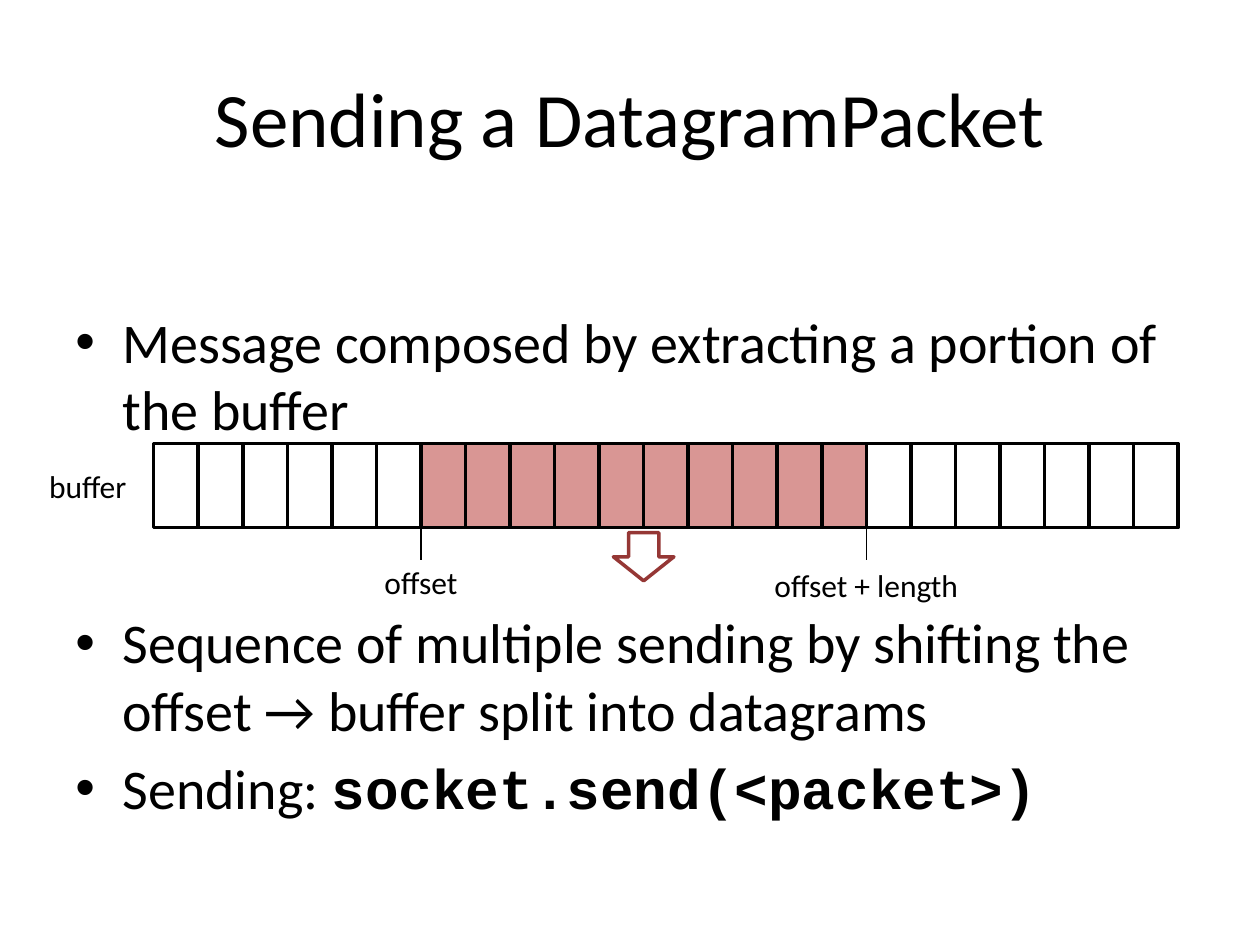
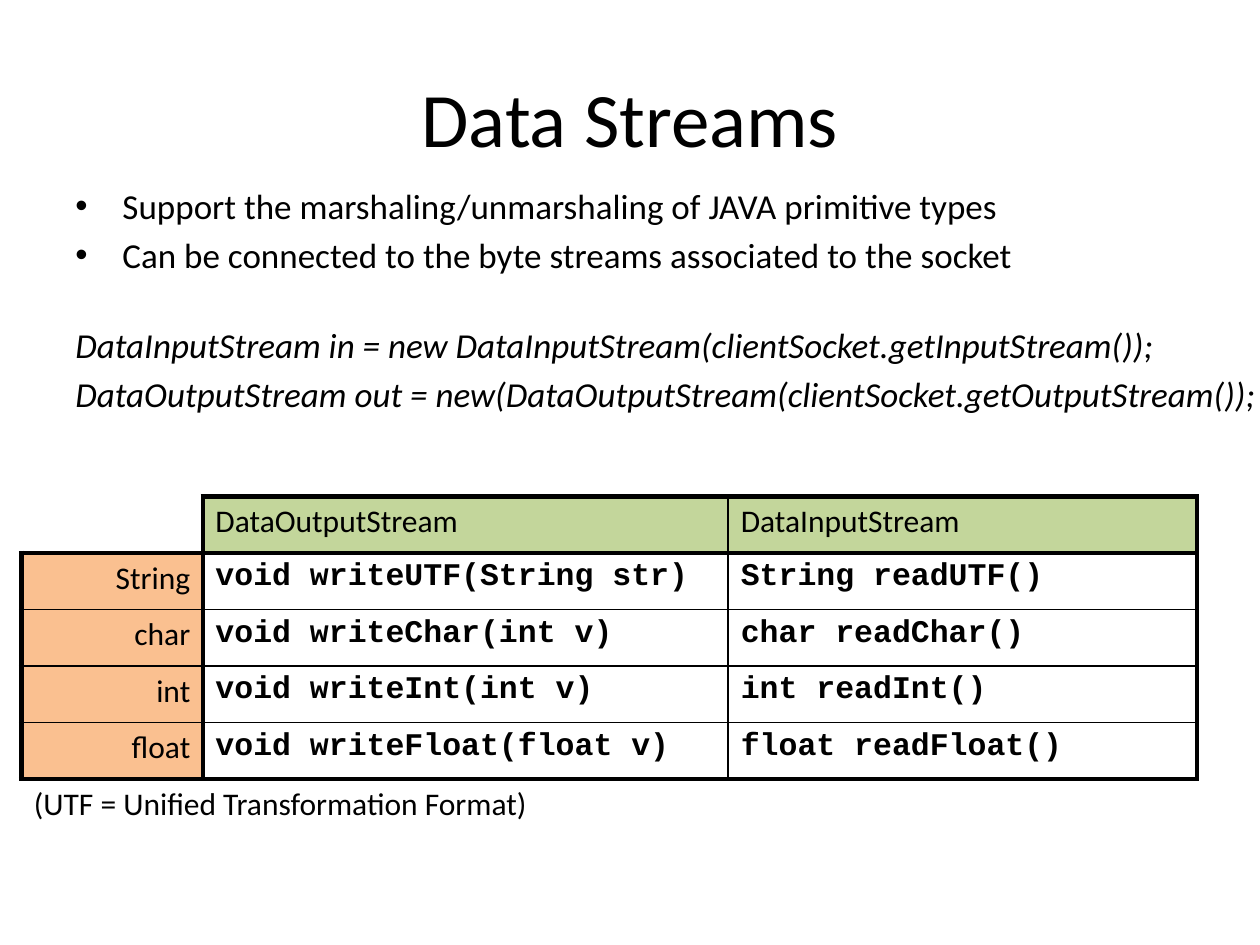
from lxml.etree import SubElement
from pptx import Presentation
from pptx.dml.color import RGBColor
from pptx.enum.shapes import MSO_CONNECTOR as Connector, MSO_SHAPE as Shape
from pptx.enum.text import MSO_ANCHOR as Anchor, PP_ALIGN as Align
from pptx.oxml.ns import qn
from pptx.util import Cm, Pt

# Shared look
COLORS = {
    "text": "000000",
    "paper": "FFFFFF",
    "message": "D99694",
    "arrow": "953735",
    "header": "C3D69B",
    "type": "FAC090",
}
BODY_FONT, CODE_FONT = "Calibri", "Courier New"
TITLE_BOX = (1.27, 0.76, 22.86, 3.17)
BULLET_INDENT = 0.95

# Sending slide: (text, format)
SENDING_TITLE = "Sending a DatagramPacket"
SENDING_BOX = (1.27, 6.07, 22.86, 11)
SENDING_POINTS = [
    ("Message composed by extracting a portion of the buffer", {}),
    ("Sequence of multiple sending by shifting the offset → buffer split into datagrams",
     {"before": 95}),
    ("Sending: ", {"before": 6.4, "code": "socket.send(<packet>)"}),
]
BUFFER_LEFT, BUFFER_TOP, BUFFER_WIDTH, BUFFER_HEIGHT = 3.1, 8.94, 20.65, 1.7
CELL_COUNT, MESSAGE_START, MESSAGE_END = 23, 6, 16
BUFFER_LABEL = ("buffer", (0.74, 9.3, 2.1, 1.02))
TICKS = [  # cell edge, label, label top, label width
    (MESSAGE_START, "offset", 11.23, 2.2),
    (MESSAGE_END, "offset + length", 11.28, 4.4),
]
TICK_TOP, TICK_BOTTOM = 10.67, 11.28
ARROW_TOP, ARROW_WIDTH, ARROW_HEIGHT = 10.74, 1.22, 0.97

# Streams slide
STREAMS_TITLE = "Data Streams"
STREAMS_BOX = (1.27, 3.6, 24.33, 6)
STREAMS_POINTS = [
    ("Support the marshaling/unmarshaling of JAVA primitive types", {"bullet": True}),
    ("Can be connected to the byte streams associated to the socket",
     {"bullet": True, "before": 4}),
    ("DataInputStream in = new DataInputStream(clientSocket.getInputStream());",
     {"italic": True, "before": 27}),
    ("DataOutputStream out = new(DataOutputStream(clientSocket.getOutputStream());",
     {"italic": True, "before": 4}),
]
METHOD_ROWS = [
    ("", "DataOutputStream", "DataInputStream"),
    ("String", "void writeUTF(String str)", "String readUTF()"),
    ("char", "void writeChar(int v)", "char readChar()"),
    ("int", "void writeInt(int v)", "int readInt()"),
    ("float", "void writeFloat(float v)", "float readFloat()"),
    ("(UTF = Unified Transformation Format)", "", ""),
]
NOTE_ROW = len(METHOD_ROWS) - 1
TABLE_LEFT, TABLE_TOP, ROW_HEIGHT = 0.43, 10.01, 1.14
COLUMN_WIDTHS = (3.66, 10.59, 9.45)
THICK, THIN, NONE = 3, 1, 0


def color(name):
    return RGBColor.from_string(COLORS[name])


def box(lengths):
    return [Cm(length) for length in lengths]


def write(frame, text, size=18, font=BODY_FONT, bold=False, italic=False,
          align=Align.LEFT, bullet=False, before=0, code=""):
    """Add a paragraph, reusing the empty first one; code follows in the code font."""
    paragraph = frame.paragraphs[-1]
    if paragraph.runs:
        paragraph = frame.add_paragraph()
    paragraph.alignment = align
    paragraph.space_before = Pt(before)
    if bullet:
        properties = paragraph._p.get_or_add_pPr()
        properties.set("marL", str(Cm(BULLET_INDENT)))
        properties.set("indent", str(-Cm(BULLET_INDENT)))
        SubElement(properties, qn("a:buFont"), typeface="Arial")
        SubElement(properties, qn("a:buChar"), char="•")
    parts = [(text, font, bold)] + ([(code, CODE_FONT, True)] if code else [])
    for part, typeface, weight in parts:
        run = paragraph.add_run()
        run.text = part
        run.font.name, run.font.size = typeface, Pt(size)
        run.font.bold, run.font.italic = weight, italic
        run.font.color.rgb = color("text")


def add_text(slide, lengths, paragraphs, **common):
    frame = slide.shapes.add_textbox(*box(lengths)).text_frame
    frame.word_wrap = True
    for text, extra in paragraphs:
        write(frame, text, **{**common, **extra})


def add_titled_slide(presentation, text):
    slide = presentation.slides.add_slide(presentation.slide_layouts[5])
    title = slide.shapes.title
    title.left, title.top, title.width, title.height = box(TITLE_BOX)
    title.text_frame.vertical_anchor = Anchor.MIDDLE
    write(title.text_frame, text, size=44, align=Align.CENTER)
    return slide


def add_outlined(slide, kind, lengths, fill, line):
    shape = slide.shapes.add_shape(kind, *box(lengths))
    shape.shadow.inherit = False
    shape.fill.solid()
    shape.fill.fore_color.rgb = color(fill)
    shape.line.color.rgb = color(line)
    shape.line.width = Pt(2)


def add_buffer(slide):
    cell_width = BUFFER_WIDTH / CELL_COUNT

    def edge(index):
        return BUFFER_LEFT + index * cell_width

    # Cells, with the message portion shaded
    for index in range(CELL_COUNT):
        fill = "message" if MESSAGE_START <= index < MESSAGE_END else "paper"
        add_outlined(slide, Shape.RECTANGLE,
                     (edge(index), BUFFER_TOP, cell_width, BUFFER_HEIGHT), fill, "text")
    label, label_box = BUFFER_LABEL
    add_text(slide, label_box, [(label, {})])

    # Ticks and their labels
    for index, label, top, width in TICKS:
        x = edge(index)
        tick = slide.shapes.add_connector(
            Connector.STRAIGHT, *box((x, TICK_TOP, x, TICK_BOTTOM)))
        tick.line.color.rgb = color("text")
        tick.line.width = Pt(0.75)
        SubElement(tick._element.spPr, qn("a:effectLst"))
        add_text(slide, (x - width / 2, top, width, 1.02), [(label, {})],
                 align=Align.CENTER)

    # Arrow under the middle of the message
    middle = edge((MESSAGE_START + MESSAGE_END) / 2)
    add_outlined(slide, Shape.DOWN_ARROW,
                 (middle - ARROW_WIDTH / 2, ARROW_TOP, ARROW_WIDTH, ARROW_HEIGHT),
                 "paper", "arrow")


def horizontal_border(edge, column):
    if edge > NOTE_ROW or (edge == 0 and column == 0):
        return NONE
    return THICK if edge in (0, 1, NOTE_ROW) else THIN


def vertical_border(edge, row):
    if row == NOTE_ROW or (row == 0 and edge == 0):
        return NONE
    return THIN if edge == 2 else THICK


def set_borders(cell, row, column):
    widths = {
        "a:lnL": vertical_border(column, row),
        "a:lnR": vertical_border(column + 1, row),
        "a:lnT": horizontal_border(row, column),
        "a:lnB": horizontal_border(row + 1, column),
    }
    properties = cell._tc.get_or_add_tcPr()
    for tag, width in widths.items():
        line = SubElement(properties, qn(tag), w=str(Pt(width)))
        if width:
            fill = SubElement(line, qn("a:solidFill"))
            SubElement(fill, qn("a:srgbClr"), val=COLORS["text"])
        else:
            SubElement(line, qn("a:noFill"))


def cell_look(row, column):
    """Return the fill name and text format of a table cell."""
    if row == NOTE_ROW or (row == 0 and column == 0):
        return None, {}
    if row == 0:
        return "header", {}
    if column == 0:
        return "type", {"align": Align.RIGHT}
    return None, {"font": CODE_FONT, "bold": True}


def add_methods_table(slide):
    table = slide.shapes.add_table(
        len(METHOD_ROWS), len(COLUMN_WIDTHS),
        *box((TABLE_LEFT, TABLE_TOP, sum(COLUMN_WIDTHS),
              ROW_HEIGHT * len(METHOD_ROWS)))).table
    table.first_row = table.horz_banding = False
    for column, width in zip(table.columns, COLUMN_WIDTHS):
        column.width = Cm(width)
    for row, texts in enumerate(METHOD_ROWS):
        table.rows[row].height = Cm(ROW_HEIGHT)
        for column, text in enumerate(texts):
            cell = table.cell(row, column)
            set_borders(cell, row, column)
            fill, text_format = cell_look(row, column)
            if fill:
                cell.fill.solid()
                cell.fill.fore_color.rgb = color(fill)
            else:
                cell.fill.background()
            if text:
                write(cell.text_frame, text, **text_format)
    table.cell(NOTE_ROW, 0).merge(table.cell(NOTE_ROW, len(COLUMN_WIDTHS) - 1))


def main():
    presentation = Presentation()
    presentation.slide_width, presentation.slide_height = Cm(25.4), Cm(19.05)

    sending = add_titled_slide(presentation, SENDING_TITLE)
    add_text(sending, SENDING_BOX, SENDING_POINTS, size=32, bullet=True)
    add_buffer(sending)

    streams = add_titled_slide(presentation, STREAMS_TITLE)
    add_text(streams, STREAMS_BOX, STREAMS_POINTS, size=20)
    add_methods_table(streams)

    presentation.save("out.pptx")


if __name__ == "__main__":
    main()
